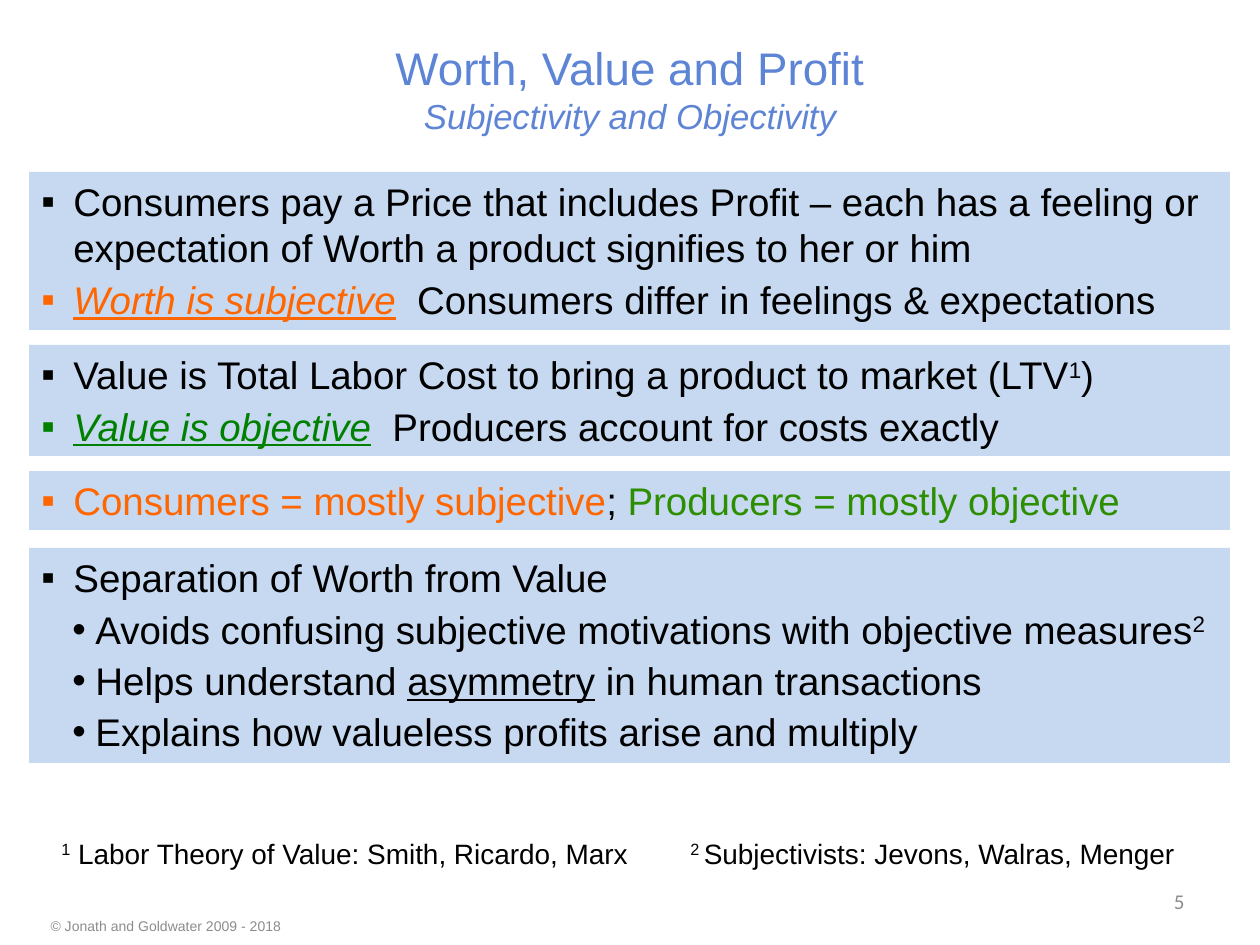
"""Build the slide on worth, value and profit."""
import copy

import pptx
import pptx.dml.color
import pptx.enum.shapes
import pptx.enum.text
import pptx.oxml.ns
import pptx.util
from lxml import etree

RGBColor = pptx.dml.color.RGBColor
ALIGN = pptx.enum.text.PP_ALIGN
ANCHOR = pptx.enum.text.MSO_ANCHOR
AUTO_SIZE = pptx.enum.text.MSO_AUTO_SIZE

BLACK = RGBColor(0x00, 0x00, 0x00)
TITLE_BLUE = RGBColor(0x5E, 0x85, 0xD5)
PANEL_BLUE = RGBColor(0xC6, 0xD9, 0xF1)
ORANGE = RGBColor(0xFF, 0x66, 0x00)
GREEN = RGBColor(0x00, 0x80, 0x00)
LEAF = RGBColor(0x2E, 0x8E, 0x01)
GREY = RGBColor(0x8C, 0x8C, 0x8C)

PIXELS_PER_INCH = 126
PANEL_LEFT, PANEL_WIDTH = 29, 1201

PLAIN = {}
RAISED = {"baseline": 30000}
SUBJECTIVE = {"color": ORANGE, "italic": True, "underline": True}
OBJECTIVE = {"color": GREEN, "italic": True, "underline": True}

TITLE = [
    ("Worth, Value and Profit", {"size": 26.1, "color": TITLE_BLUE}),
    ("Subjectivity and Objectivity", {"size": 19.8, "color": TITLE_BLUE, "italic": True}),
]

LEVELS = {
    0: {"bullet": "▪", "margin": 32, "hanging": 32},
    2: {"bullet": "•", "margin": 54, "hanging": 23},
}

PANELS = [
    {"top": 172, "height": 158, "items": [
        (0, [("Consumers pay a Price that includes Profit – each has a feeling or "
              "expectation of Worth a product signifies to her or him", PLAIN)]),
        (0, [("Worth is subjective", SUBJECTIVE),
             ("  Consumers differ in feelings & expectations", PLAIN)]),
    ]},
    {"top": 345, "height": 111, "items": [
        (0, [("Value is Total Labor Cost to bring a product to market (LTV", PLAIN),
             ("1", RAISED), (")", PLAIN)]),
        (0, [("Value is objective", OBJECTIVE),
             ("  Producers account for costs exactly", PLAIN)]),
    ]},
    {"top": 471, "height": 59, "items": [
        (0, [("Consumers = mostly subjective", {"color": ORANGE}), ("; ", PLAIN),
             ("Producers = mostly objective", {"color": LEAF})]),
    ]},
    {"top": 548, "height": 215, "items": [
        (0, [("Separation of Worth from Value", PLAIN)]),
        (2, [("Avoids confusing subjective motivations with objective measures", PLAIN),
             ("2", RAISED)]),
        (2, [("Helps understand ", PLAIN), ("asymmetry", {"underline": True}),
             (" in human transactions", PLAIN)]),
        (2, [("Explains how valueless profits arise and multiply", PLAIN)]),
    ]},
]

FOOTNOTE = {"size": 16}
NOTES = [
    {"box": (49, 830, 601, 47), "wrap": False, "align": ALIGN.LEFT, "anchor": ANCHOR.TOP,
     "format": FOOTNOTE,
     "runs": [("1", RAISED), (" Labor Theory of Value: Smith, Ricardo, Marx", PLAIN)]},
    {"box": (678, 830, 519, 47), "wrap": True, "align": ALIGN.LEFT, "anchor": ANCHOR.TOP,
     "format": FOOTNOTE,
     "runs": [("2 ", RAISED), ("Subjectivists: Jevons, Walras, Menger", PLAIN)]},
    {"box": (903, 876, 294, 50), "wrap": True, "align": ALIGN.RIGHT, "anchor": ANCHOR.MIDDLE,
     "format": {"size": 12, "name": "Calibri", "color": GREY}, "runs": [("5", PLAIN)]},
    {"box": (35, 908, 266, 35), "wrap": True, "align": ALIGN.CENTER, "anchor": ANCHOR.MIDDLE,
     "format": {"size": 8, "color": GREY},
     "runs": [("© Jonath and Goldwater 2009 - 2018 ", PLAIN)]},
]


def px(length):
    """Turn pixels into EMU."""
    return pptx.util.Emu(round(length * 914400 / PIXELS_PER_INCH))


def add_run(paragraph, text, values):
    """Add a run and apply its format values."""
    values = {"name": "Arial", "size": 22, "color": BLACK, **values}
    run = paragraph.add_run()
    run.text = text
    run.font.color.rgb = values.pop("color")
    run.font.size = pptx.util.Pt(values.pop("size"))
    baseline = values.pop("baseline", None)
    for name, value in values.items():
        setattr(run.font, name, value)
    if baseline:
        run.font._element.set("baseline", str(baseline))
    return run


def add_bullet(paragraph, bullet, margin, hanging):
    """Give the paragraph a hanging bullet."""
    properties = paragraph._p.get_or_add_pPr()
    properties.set("marL", str(px(margin)))
    properties.set("indent", str(-px(hanging)))
    for tag, name, value in (("a:buFont", "typeface", "Arial"), ("a:buChar", "char", bullet)):
        etree.SubElement(properties, pptx.oxml.ns.qn(tag)).set(name, value)


def fill_title(title):
    """Place the title placeholder and write its two lines."""
    title.left, title.top, title.width, title.height = map(px, (63, 35, 1134, 107))
    frame = title.text_frame
    frame.auto_size = AUTO_SIZE.NONE
    frame.vertical_anchor = ANCHOR.MIDDLE
    paragraph = frame.paragraphs[0]
    paragraph.alignment = ALIGN.CENTER
    heading, subheading = TITLE
    run = add_run(paragraph, *heading)
    paragraph.add_line_break()
    paragraph._p[-1].append(copy.deepcopy(run.font._element))
    add_run(paragraph, *subheading)


def add_panel(slide, top, height, items):
    """Add a filled panel holding a bulleted list."""
    shape = slide.shapes.add_shape(
        pptx.enum.shapes.MSO_SHAPE.RECTANGLE, *map(px, (PANEL_LEFT, top, PANEL_WIDTH, height)))
    shape.shadow.inherit = False
    shape.fill.solid()
    shape.fill.fore_color.rgb = PANEL_BLUE
    shape.line.fill.background()
    frame = shape.text_frame
    frame.word_wrap = True
    frame.auto_size = AUTO_SIZE.SHAPE_TO_FIT_TEXT
    frame.vertical_anchor = ANCHOR.TOP
    for index, (level, runs) in enumerate(items):
        paragraph = frame.add_paragraph() if index else frame.paragraphs[0]
        paragraph.level = level
        paragraph.alignment = ALIGN.LEFT
        paragraph.space_after = pptx.util.Pt(3)
        add_bullet(paragraph, **LEVELS[level])
        for text, values in runs:
            add_run(paragraph, text, values)


def add_note(slide, note):
    """Add a one-line text box."""
    frame = slide.shapes.add_textbox(*map(px, note["box"])).text_frame
    frame.word_wrap = note["wrap"]
    frame.vertical_anchor = note["anchor"]
    paragraph = frame.paragraphs[0]
    paragraph.alignment = note["align"]
    for text, values in note["runs"]:
        add_run(paragraph, text, {**note["format"], **values})


def main():
    """Build and save the presentation."""
    presentation = pptx.Presentation()
    presentation.slide_width, presentation.slide_height = px(1260), px(945)
    slide = presentation.slides.add_slide(presentation.slide_layouts[5])
    fill_title(slide.shapes.title)
    for panel in PANELS:
        add_panel(slide, **panel)
    for note in NOTES:
        add_note(slide, note)
    presentation.save("out.pptx")


if __name__ == "__main__":
    main()
